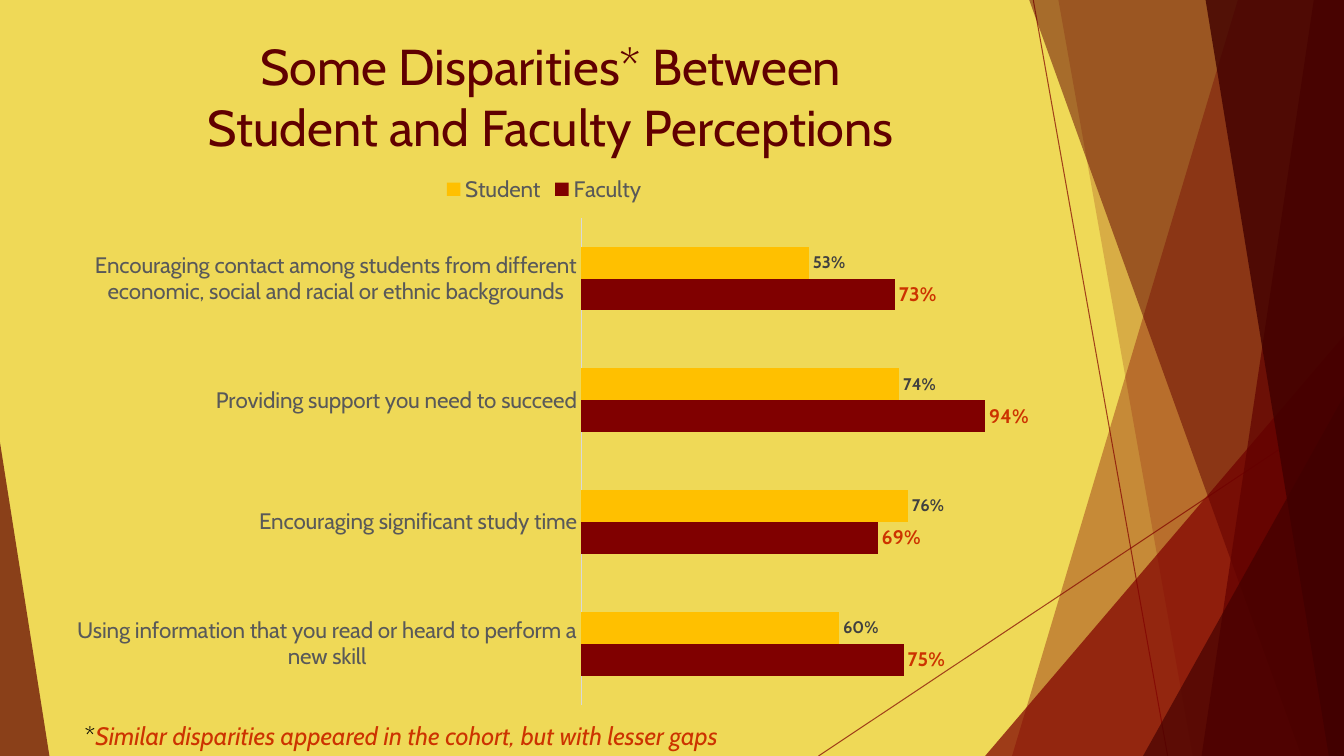
"""Build a slide comparing student and faculty perceptions in a bar chart."""
from lxml import etree
from pptx import Presentation
from pptx.chart.data import CategoryChartData
from pptx.dml.color import RGBColor
from pptx.enum.chart import XL_CHART_TYPE, XL_LABEL_POSITION, XL_LEGEND_POSITION, XL_TICK_MARK
from pptx.enum.shapes import MSO_CONNECTOR, MSO_SHAPE
from pptx.enum.text import MSO_ANCHOR, MSO_AUTO_SIZE, PP_ALIGN
from pptx.oxml.ns import qn
from pptx.util import Inches, Pt

BAR = XL_CHART_TYPE.BAR_CLUSTERED
OUTSIDE = XL_LABEL_POSITION.OUTSIDE_END
TOP_LEGEND = XL_LEGEND_POSITION.TOP
NO_TICK = XL_TICK_MARK.NONE
STRAIGHT = MSO_CONNECTOR.STRAIGHT
TRIANGLE = MSO_SHAPE.ISOSCELES_TRIANGLE
TOP = MSO_ANCHOR.TOP
NO_FIT = MSO_AUTO_SIZE.NONE
CENTER, LEFT = PP_ALIGN.CENTER, PP_ALIGN.LEFT

THEME = {
    "font": "Cabin",
    "back": "EFD957", "red": "800000", "dark": "600000", "deep": "400000",
    "accent": "CC3300", "gold": "FFC000", "black": "000000",
    "grey": "595959", "label": "404040", "rule": "D9D9D9",
    "title": 36, "note": 18, "axis": 16, "big_label": 14, "small_label": 12,
}


def write(text, target, size, color, bold=None, italic=None, align=None):
    """Add text to a paragraph, or format a chart font when text is None."""
    font = target
    if text is not None:
        r = target.add_run()
        r.text = text
        font = r.font
        target.alignment = align
    font.name = THEME["font"]
    font.size = Pt(THEME[size])
    font.bold, font.italic = bold, italic
    font.color.rgb = RGBColor.from_string(THEME[color])


def grid(*lengths):
    """Turn alternating x and y percentages of the slide into lengths."""
    return [int(v * (prs.slide_height if i % 2 else prs.slide_width) / 100)
            for i, v in enumerate(lengths)]


prs = Presentation()
prs.slide_width, prs.slide_height = Inches(13.33), Inches(7.5)
s = prs.slides.add_slide(prs.slide_layouts[5])
s.background.fill.solid()
s.background.fill.fore_color.rgb = RGBColor.from_string(THEME["back"])

# kind, geometry in percent, colour, opacity
facets = [
    ("line", (76.88, 0, 86.88, 100), "red", 70),
    ("line", (100, 53.73, 60.9, 100), "red", 70),
    ("band", (92.1, 75.3), "red", 36),
    ("band", (78.75, 88.75), "red", 20),
    ("right", (73.3, 44.4, 26.7, 55.6), "red", 72),
    ("band", (76.58, 96.83), "dark", 50),
    ("band", (97.75, 89.4), "dark", 70),
    ("band", (89.7, 98.87), "deep", 80),
    ("right", (85.05, 52.4, 14.95, 47.6), "deep", 66),
    ("left", (0, 58.5, 3.68, 41.5), "dark", 70),
]
for kind, geometry, color, opacity in facets:
    rgb = RGBColor.from_string(THEME[color])
    if kind == "line":
        sp = s.shapes.add_connector(STRAIGHT, *grid(*geometry))
        sp.line.color.rgb = rgb
        sp.line.width = Pt(0.75)
        etree.SubElement(sp._element.spPr, qn("a:effectLst"))
    else:
        if kind == "band":
            upper, lower = geometry
            fb = s.shapes.build_freeform(*grid(upper, 0))
            corners = [(100, 0), (100, 100), (lower, 100)]
            fb.add_line_segments([grid(*c) for c in corners], close=True)
            sp = fb.convert_to_shape()
        else:
            sp = s.shapes.add_shape(TRIANGLE, *grid(*geometry))
            sp.adjustments[0] = 1 if kind == "right" else 0
        sp.shadow.inherit = False
        sp.fill.solid()
        sp.fill.fore_color.rgb = rgb
        sp.line.fill.background()
    clr = sp._element.spPr.find(".//" + qn("a:srgbClr"))
    etree.SubElement(clr, qn("a:alpha"), val=str(opacity * 1000))

title = s.shapes.title
title.left, title.top, title.width, title.height = grid(6.15, 4, 70.5, 19.2)
tf = title.text_frame
tf.vertical_anchor, tf.auto_size, tf.word_wrap = TOP, NO_FIT, True
write("Some Disparities* Between ", tf.paragraphs[0], "title", "dark", align=CENTER)
tf.paragraphs[0].add_line_break()
write("Student and Faculty Perceptions ", tf.paragraphs[0], "title", "dark", align=CENTER)

tf = s.shapes.add_textbox(*grid(5.55, 94.67, 65.4, 5.33)).text_frame
tf.word_wrap = True
p = tf.paragraphs[0]
write("*", p, "note", "black", align=LEFT)
write("Similar disparities appeared in the cohort, but with lesser gaps",
      p, "note", "accent", italic=True, align=LEFT)

data = CategoryChartData(number_format="0%")
data.categories = [
    "Using information that you read or heard to perform a new skill",
    "Encouraging significant study time",
    "Providing support you need to succeed",
    "Encouraging contact among students from different economic, "
    "social and racial or ethnic backgrounds",
]
data.add_series("Faculty", (0.75, 0.69, 0.94, 0.73))
data.add_series("Student", (0.6, 0.76, 0.74, 0.53))
chart = s.shapes.add_chart(BAR, *grid(4.28, 21.73, 72.4, 72.93), data).chart
chart.has_title = False
chart.has_legend = True
chart.legend.position = TOP_LEGEND
chart.legend.include_in_layout = False
write(None, chart.legend.font, "axis", "grey")

cat = chart.category_axis
cat.major_tick_mark = cat.minor_tick_mark = NO_TICK
cat.format.line.color.rgb = RGBColor.from_string(THEME["rule"])
cat.format.line.width = Pt(0.75)
write(None, cat.tick_labels.font, "axis", "grey")
val = chart.value_axis
val.visible = val.has_major_gridlines = False
val.minimum_scale, val.maximum_scale, val.major_unit = 0, 1, 0.2

plot = chart.plots[0]
plot.gap_width, plot.overlap, plot.vary_by_categories = 182, 0, False
styles = [("red", "big_label", "accent"), ("gold", "small_label", "label")]
for series, (fill, size, color) in zip(plot.series, styles):
    series.format.fill.solid()
    series.format.fill.fore_color.rgb = RGBColor.from_string(THEME[fill])
    labels = series.data_labels
    labels.show_value = True
    labels.number_format, labels.number_format_is_linked = "0%", False
    labels.position = OUTSIDE
    write(None, labels.font, size, color, bold=True)

prs.save("out.pptx")
